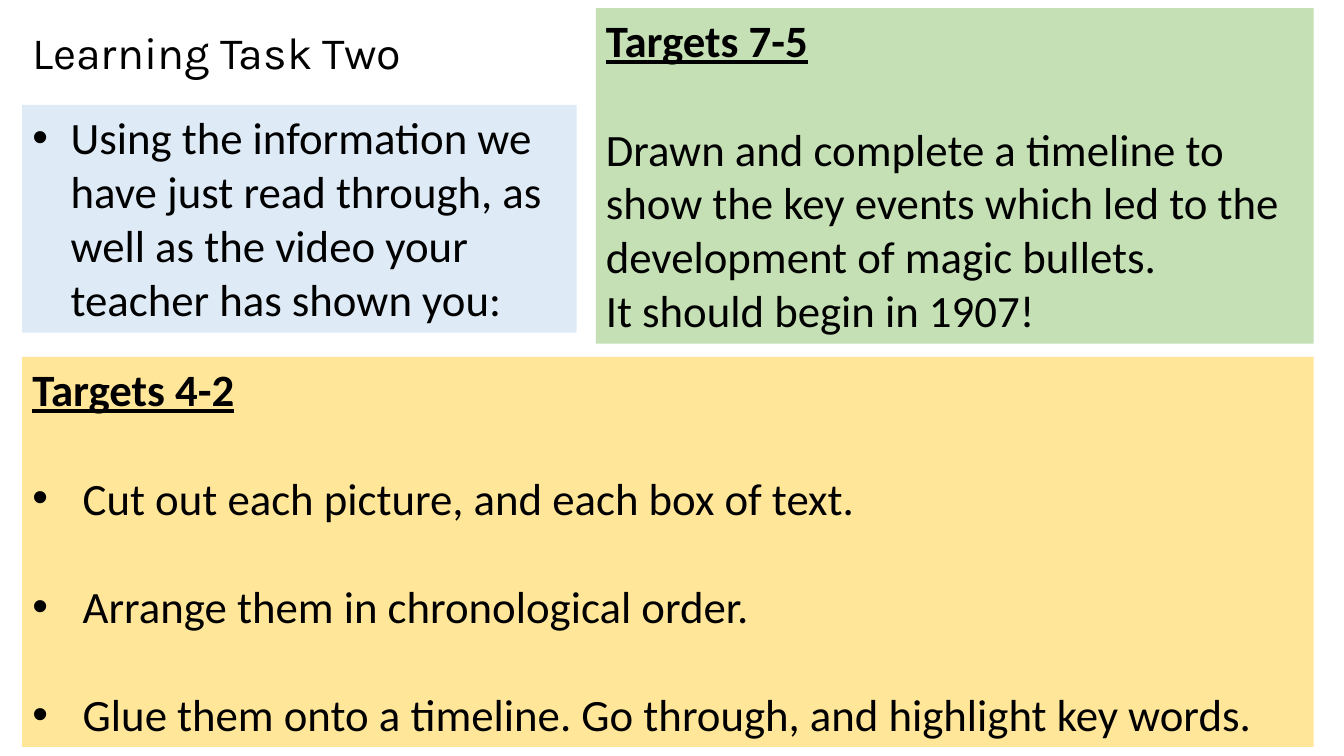
"""Build the Learning Task Two slide with its tiered target panels."""
from dataclasses import dataclass

from lxml.etree import SubElement
from pptx import Presentation
from pptx.dml.color import RGBColor
from pptx.enum.text import MSO_ANCHOR as Anchor, MSO_AUTO_SIZE as AutoSize, PP_ALIGN as Align
from pptx.oxml.ns import qn
from pptx.util import Inches, Pt


@dataclass(frozen=True)
class Theme:
    heading_font: str = "Karla"
    body_font: str = "Calibri"
    size: int = 32
    line_gap: int = 39
    ink: str = "000000"
    intro_fill: str = "DEEBF7"
    upper_fill: str = "C5E0B4"
    lower_fill: str = "FFE699"


@dataclass(frozen=True)
class Line:
    text: str
    indent: float = 0
    heading: bool = False
    gap_before: bool = False


@dataclass(frozen=True)
class Panel:
    box: tuple[float, float, float, float]
    lines: tuple[Line, ...]
    font: str
    fill: str | None = None


THEME = Theme()
TITLE = Panel((0.22, 0.19, 6.29, 0.64), (Line("Learning Task Two"),), THEME.heading_font)
INTRO = Panel(
    (0.22, 1.04, 5.5, 2.26),
    (Line("Using the information we have just read through, as well as the video "
          "your teacher has shown you:", indent=0.38),),
    THEME.body_font, THEME.intro_fill)
UPPER_TARGETS = Panel(
    (5.91, 0.08, 7.12, 3.33),
    (Line("Targets 7-5", heading=True),
     Line("Drawn and complete a timeline to show the key events which led to the "
          "development of magic bullets.", gap_before=True),
     Line("It should begin in 1907!")),
    THEME.body_font, THEME.upper_fill)
STEPS = (
    "Cut out each picture, and each box of text.",
    "Arrange them in chronological order.",
    "Glue them onto a timeline. Go through, and highlight key words.",
)
LOWER_TARGETS = Panel(
    (0.22, 3.54, 12.81, 3.87),
    (Line("Targets 4-2", heading=True),
     *(Line(step, indent=0.5, gap_before=True) for step in STEPS)),
    THEME.body_font, THEME.lower_fill)


def write_line(paragraph, line: Line, font_name: str) -> None:
    """Write one line with its bullet, spacing and type."""
    paragraph.text = line.text
    properties = paragraph._p.get_or_add_pPr()
    properties.set("marL", str(Inches(line.indent)))
    properties.set("indent", str(-Inches(line.indent)))
    if line.indent:
        SubElement(properties, qn("a:buFont"), typeface="Arial")
        SubElement(properties, qn("a:buChar"), char="•")
    else:
        SubElement(properties, qn("a:buNone"))
    paragraph.alignment = Align.LEFT
    paragraph.line_spacing = 1.0
    paragraph.space_before = Pt(THEME.line_gap if line.gap_before else 0)
    paragraph.space_after = Pt(0)
    for run in paragraph.runs:
        run.font.name = font_name
        run.font.size = Pt(THEME.size)
        run.font.color.rgb = RGBColor.from_string(THEME.ink)
        run.font.bold = line.heading
        run.font.underline = line.heading


def fill_panel(shape, panel: Panel) -> None:
    """Place a panel and fill it with its lines."""
    shape.left, shape.top, shape.width, shape.height = map(Inches, panel.box)
    if panel.fill:
        shape.fill.solid()
        shape.fill.fore_color.rgb = RGBColor.from_string(panel.fill)
    frame = shape.text_frame
    frame.word_wrap = True
    frame.auto_size = AutoSize.NONE
    frame.vertical_anchor = Anchor.TOP
    frame.text = "\n".join(line.text for line in panel.lines)
    for paragraph, line in zip(frame.paragraphs, panel.lines):
        write_line(paragraph, line, panel.font)


def main() -> None:
    """Build and save the slide."""
    deck = Presentation()
    deck.slide_width, deck.slide_height = Inches(13.33), Inches(7.5)
    slide = deck.slides.add_slide(deck.slide_layouts.get_by_name("Two Content"))
    title, intro, lower_targets = slide.placeholders
    upper_targets = slide.shapes.add_textbox(*map(Inches, UPPER_TARGETS.box))
    fill_panel(title, TITLE)
    fill_panel(intro, INTRO)
    fill_panel(upper_targets, UPPER_TARGETS)
    fill_panel(lower_targets, LOWER_TARGETS)
    deck.save("out.pptx")


if __name__ == "__main__":
    main()
